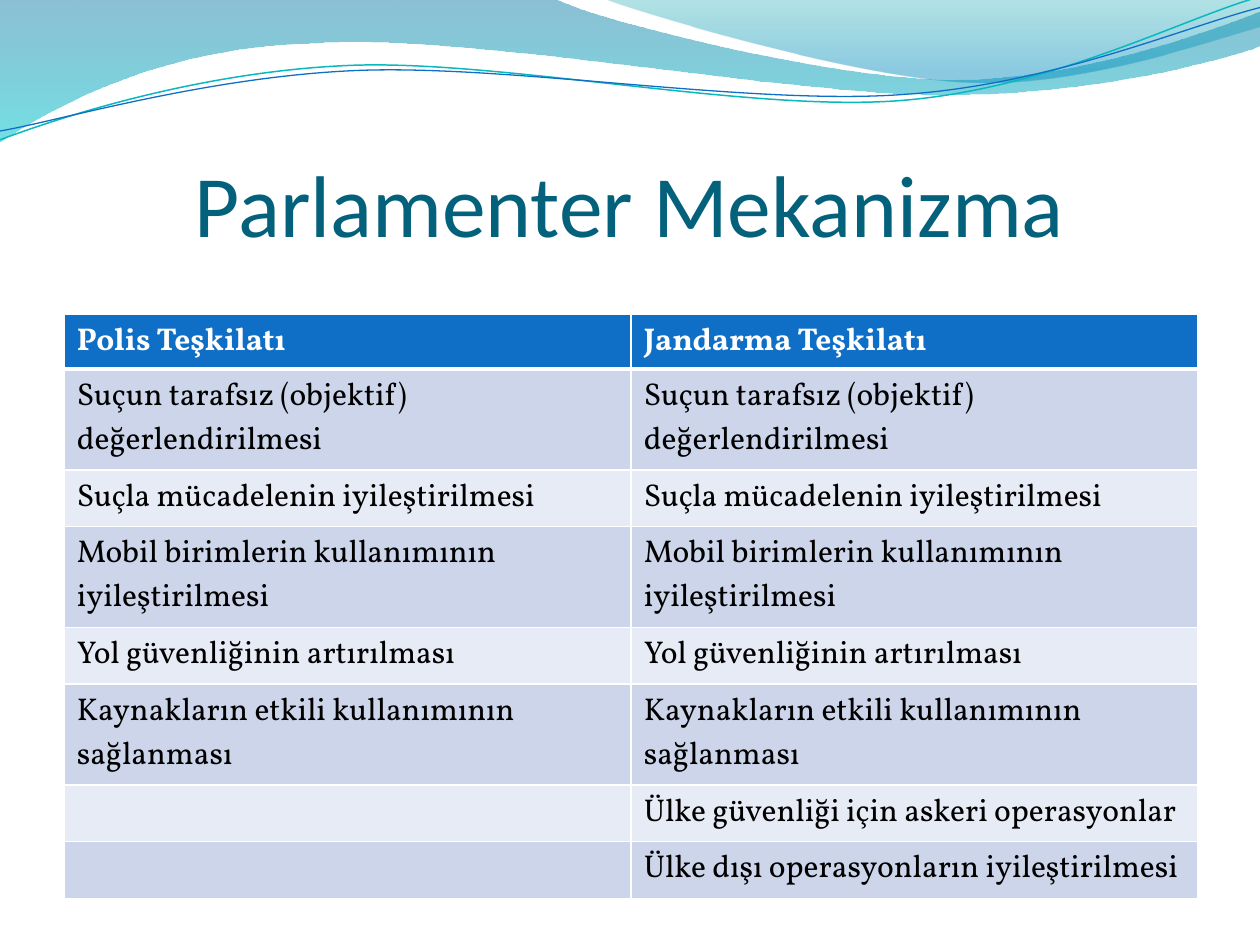
from dataclasses import dataclass
from lxml import etree
from pptx import Presentation, util as u
from pptx.dml.color import RGBColor
from pptx.enum import text
from pptx.oxml import ns


@dataclass
class Theme:
    head: str = "Calibri"
    body: str = "Vollkorn"
    big: int = 50
    size: int = 18
    title: str = "04617B"
    blue: str = "0F6FC6"
    teal: str = "0AB8BF"
    white: str = "FFFFFF"
    ink: str = "000000"
    bands: tuple = ("CCD5EA", "E7EBF5")
    wave: tuple = ((0, "0074A1", 45), (1, "00C6CF", 55))
    swell: tuple = ((0, "00A1A9", 30), (0.8, "008BBF", 45))


def rgb(code):
    return RGBColor.from_string(code)


class Page:
    def __init__(self, slide, theme):
        self.slide, self.theme = slide, theme

    def draw(self, start, parts, close):
        pen = self.slide.shapes.build_freeform(*map(u.Inches, start))
        for part in parts:
            spots = [u.Inches(n) for n in part]
            pen.add_line_segments(list(zip(spots[::2], spots[1::2])), close=False)
        if close:
            pen.add_line_segments([], close=True)
        shape = pen.convert_to_shape()
        shape.shadow.inherit = False
        lines = iter(list(shape._element.iter(ns.qn("a:lnTo"))))
        for part in parts:
            group = [next(lines) for _ in part[::2]]
            if len(group) == 3:
                bend = etree.Element(ns.qn("a:cubicBezTo"))
                group[0].addprevious(bend)
                for line in group:
                    bend.append(line[0])
                    line.getparent().remove(line)
        return shape

    def wave(self, stops, start, *parts):
        shape = self.draw(start, parts, True)
        shape.line.fill.background()
        shape.fill.gradient()
        shape.fill.gradient_angle = 270
        for stop, (place, code, _) in zip(shape.fill.gradient_stops, stops):
            stop.position = place
            stop.color.rgb = rgb(code)
        marks = shape._element.spPr.iter(ns.qn("a:srgbClr"))
        for mark, (_, _, alpha) in zip(marks, stops):
            etree.SubElement(mark, ns.qn("a:alpha"), val=str(alpha * 1000))

    def curve(self, code, width, start, *parts):
        shape = self.draw(start, parts, False)
        shape.fill.background()
        shape.line.color.rgb = rgb(code)
        shape.line.width = u.Pt(width)

    def style(self, para, face, size, code, bold=False):
        font = para.font
        font.name, font.size, font.bold = face, u.Pt(size), bold
        font.color.rgb = rgb(code)

    def title(self, words, *box):
        frame = self.slide.shapes.add_textbox(*map(u.Inches, box)).text_frame
        frame.word_wrap = True
        frame.vertical_anchor = text.MSO_ANCHOR.BOTTOM
        frame.margin_left = frame.margin_right = frame.margin_bottom = 0
        para = frame.paragraphs[0]
        para.text = words
        para.alignment = text.PP_ALIGN.CENTER
        self.style(para, self.theme.head, self.theme.big, self.theme.title)

    def border(self, cell, side, width):
        line = etree.SubElement(cell._tc.get_or_add_tcPr(), ns.qn("a:ln" + side),
                                w=str(u.Pt(width)))
        fill = etree.SubElement(line, ns.qn("a:solidFill"))
        etree.SubElement(fill, ns.qn("a:srgbClr"), val=self.theme.white)

    def table(self, rows, highs, left, top, width):
        look = self.theme
        grid = self.slide.shapes.add_table(
            len(rows), len(rows[0]),
            *map(u.Inches, (left, top, width, sum(highs)))).table
        grid.horz_banding = False
        for r, (row, high) in enumerate(zip(rows, highs)):
            first = r == 0
            grid.rows[r].height = u.Inches(high)
            for c, words in enumerate(row):
                cell = grid.cell(r, c)
                for side in "LRTB":
                    thick = (first and side == "B") or (r == 1 and side == "T")
                    self.border(cell, side, 3 if thick else 1)
                cell.fill.solid()
                cell.fill.fore_color.rgb = rgb(
                    look.blue if first else look.bands[(r - 1) % 2])
                if words:
                    para = cell.text_frame.paragraphs[0]
                    para.text = words
                    self.style(para, look.body, look.size,
                               look.white if first else look.ink, first)


def main():
    deck = Presentation()
    deck.slide_width, deck.slide_height = u.Inches(10), u.Inches(7.5)
    look = Theme()
    page = Page(deck.slides.add_slide(deck.slide_layouts[6]), look)

    page.wave(look.wave, (0, 0), (4.4, -0.01),
              (4.76, 0.17, 6.64, 0.63, 7.58, 0.63),
              (8.53, 0.63, 9.58, 0.26, 10, 0.09), (10.01, 0.36),
              (9.83, 0.44, 8.7, 0.76, 7.46, 0.75),
              (6.22, 0.75, 3.82, 0.28, 2.57, 0.34),
              (1.29, 0.36, 0.46, 0.83, -0.01, 1.13), (0, 0))
    page.wave(look.swell, (4.79, -0.01),
              (5.09, 0.11, 6.82, 0.62, 7.69, 0.65),
              (8.56, 0.69, 9.61, 0.32, 10, 0.21), (10, 0), (4.79, -0.01))
    page.curve(look.teal, 0.85, (0, 1.11),
               (0.48, 0.93, 1.58, 0.57, 2.77, 0.52),
               (3.95, 0.47, 5.93, 0.89, 7.13, 0.8),
               (8.33, 0.71, 9.38, 0.15, 9.98, -0.02))
    page.curve(look.blue, 0.75, (0, 1.04),
               (0.47, 0.96, 1.64, 0.61, 2.83, 0.56),
               (4.03, 0.51, 5.97, 0.84, 7.17, 0.75),
               (8.36, 0.67, 9.41, 0.21, 10, 0.06))

    page.title("Parlamenter Mekanizma", 0.5, 0.77, 9, 1.25)

    shared = ["Suçun tarafsız (objektif) değerlendirilmesi",
              "Suçla mücadelenin iyileştirilmesi",
              "Mobil birimlerin kullanımının iyileştirilmesi",
              "Yol güvenliğinin artırılması",
              "Kaynakların etkili kullanımının sağlanması"]
    rows = [("Polis Teşkilatı", "Jandarma Teşkilatı"),
            *((goal, goal) for goal in shared),
            ("", "Ülke güvenliği için askeri operasyonlar"),
            ("", "Ülke dışı operasyonların iyileştirilmesi")]
    highs = [0.44, *(0.8, 0.45) * 3, 0.45]
    page.table(rows, highs, 0.51, 2.49, 9)
    deck.save("out.pptx")


if __name__ == "__main__":
    main()
